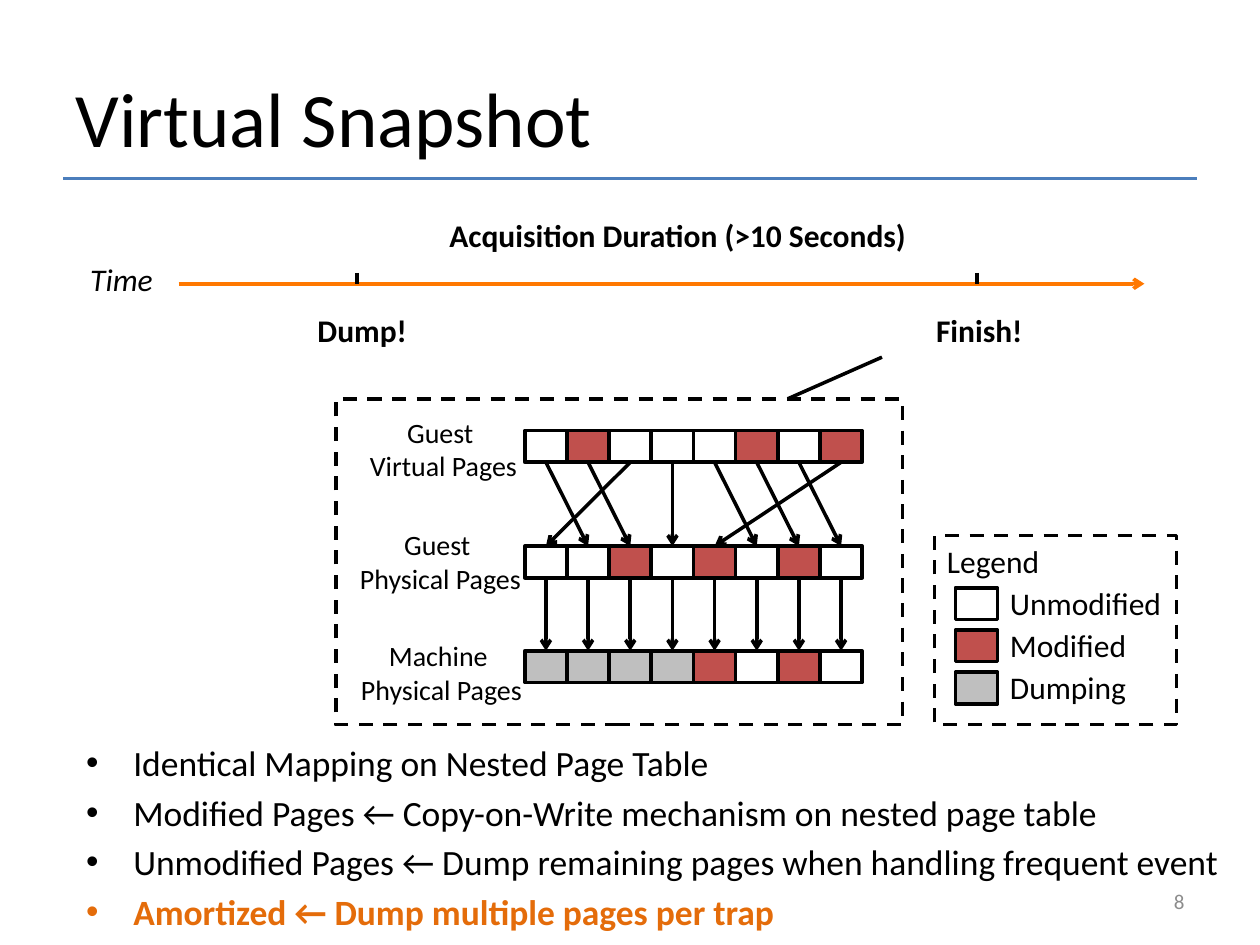
from pptx import Presentation
from pptx.dml.color import RGBColor
from pptx.enum.dml import MSO_LINE
from pptx.enum.shapes import MSO_CONNECTOR, MSO_SHAPE
from pptx.enum.text import MSO_ANCHOR, MSO_AUTO_SIZE, PP_ALIGN
from pptx.oxml.ns import qn
from pptx.util import Cm, Pt
from lxml.etree import SubElement

THEME = {
    "font": "Calibri", "ink": "000000", "rule": "4B7EBC", "time": "FF7800",
    "accent": "E46C0A", "number": "8C8C8C", "line": 2,
    "title": 44, "body": 20.3, "label": 18, "caption": 16, "small": 12,
}
FILLS = {"U": None, "M": "C0504D", "D": "BFBFBF"}

TITLE = "Virtual Snapshot"
POINTS = [
    "Identical Mapping on Nested Page Table",
    "Modified Pages ← Copy-on-Write mechanism on nested page table",
    "Unmodified Pages ← Dump remaining pages when handling frequent event",
    "Amortized ← Dump multiple pages per trap",
]
LABELS = [
    ("Acquisition Duration (>10 Seconds)", 8.81, 4.24, 9.8, {"bold": True}),
    ("Time", 1.57, 5.11, 1.8, {"italic": True}),
    ("Dump!", 6.15, 6.15, 2.34, {"bold": True}),
    ("Finish!", 18.62, 6.15, 2.26, {"bold": True}),
]
TICKS = [7.2, 19.69]
PAGES = [
    ("Guest \nVirtual Pages", 7.19, 8.25, 3.5, 8.68, "UMUUUMUM"),
    ("Guest \nPhysical Pages", 6.99, 10.52, 3.78, 11.01, "UUMUMUMU"),
    ("Machine \nPhysical Pages", 7.01, 12.75, 3.78, 13.12, "DDDDMUMU"),
]
MAPS = [[1, 2, 0, 3, 5, 6, 7, 4], list(range(8))]
LEGEND = [("Unmodified", "U", 3.6), ("Modified", "M", 2.9), ("Dumping", "D", 2.9)]
LEFT, WIDE, HIGH = 10.58, 0.85, 0.64


def style(frame, size, color=THEME["ink"], align=PP_ALIGN.LEFT, bold=None, italic=None):
    for para in frame.paragraphs:
        para.alignment = align
        for run in para.runs:
            font = run.font
            font.name, font.size = THEME["font"], Pt(size)
            font.bold, font.italic = bold, italic
            font.color.rgb = RGBColor.from_string(color)


def place(shape, x, y, w, h):
    shape.left, shape.top, shape.width, shape.height = Cm(x), Cm(y), Cm(w), Cm(h)


def label(slide, text, x, y, w, h=1.02, size=THEME["label"], **looks):
    frame = slide.shapes.add_textbox(Cm(x), Cm(y), Cm(w), Cm(h)).text_frame
    frame.text = text
    frame.word_wrap = False
    style(frame, size, **looks)
    return frame


def box(slide, x, y, w, h, fill=None, dash=False):
    shape = slide.shapes.add_shape(MSO_SHAPE.RECTANGLE, Cm(x), Cm(y), Cm(w), Cm(h))
    shape.shadow.inherit = False
    if fill:
        shape.fill.solid()
        shape.fill.fore_color.rgb = RGBColor.from_string(fill)
    else:
        shape.fill.background()
    shape.line.color.rgb = RGBColor.from_string(THEME["ink"])
    shape.line.width = Pt(THEME["line"])
    if dash:
        shape.line.dash_style = MSO_LINE.DASH
    return shape


def line(slide, x1, y1, x2, y2, color=THEME["ink"], arrow=False):
    link = slide.shapes.add_connector(MSO_CONNECTOR.STRAIGHT, Cm(x1), Cm(y1), Cm(x2), Cm(y2))
    link.line.color.rgb = RGBColor.from_string(color)
    link.line.width = Pt(THEME["line"])
    if arrow:
        SubElement(link.line._get_or_add_ln(), qn("a:tailEnd"), type="arrow")
    SubElement(link._element.spPr, qn("a:effectLst"))
    return link


def join(slide, top, low):
    link = line(slide, 0, 0, 1, 1, arrow=True)
    link.begin_connect(top, 2)
    link.end_connect(low, 0)


def words(slide):
    title, body = slide.shapes.title, slide.placeholders[1]
    place(title, 1.27, 0.76, 22.86, 3.18)
    title.text_frame.text = TITLE
    title.text_frame.vertical_anchor = MSO_ANCHOR.MIDDLE
    style(title.text_frame, THEME["title"])
    place(body, 1.48, 14.81, 23.92, 3.6)
    frame = body.text_frame
    frame.text = "\n".join(POINTS)
    frame.auto_size = MSO_AUTO_SIZE.NONE
    style(frame, THEME["body"])
    font = frame.paragraphs[-1].runs[0].font
    font.bold = True
    font.color.rgb = RGBColor.from_string(THEME["accent"])
    number = label(slide, "8", 18.21, 17.65, 5.92, size=THEME["small"],
                   color=THEME["number"], align=PP_ALIGN.RIGHT)
    number.word_wrap = True
    number.vertical_anchor = MSO_ANCHOR.MIDDLE


def timeline(slide):
    line(slide, 1.27, 3.6, 24.13, 3.6, THEME["rule"])
    line(slide, 3.6, 5.72, 23.07, 5.72, THEME["time"], arrow=True)
    for x in TICKS:
        line(slide, x, 5.5, x, 5.72)
    for text, x, y, w, looks in LABELS:
        label(slide, text, x, y, w, **looks)


def pages(slide):
    line(slide, 17.78, 7.2, 15.88, 8.04)
    box(slide, 6.77, 8.04, 11.43, 6.57, dash=True)
    rows = []
    for text, x, y, w, top, kinds in PAGES:
        label(slide, text, x, y, w, 1.62, THEME["caption"], align=PP_ALIGN.CENTER)
        rows.append([box(slide, LEFT + i * WIDE, top, WIDE, HIGH, FILLS[kind])
                     for i, kind in enumerate(kinds)])
    for upper, lower, goals in zip(rows, rows[1:], MAPS):
        for cell, goal in zip(upper, goals):
            join(slide, cell, lower[goal])


def legend(slide):
    frame = box(slide, 18.84, 10.8, 4.88, 3.81, dash=True).text_frame
    frame.text = "Legend"
    frame.vertical_anchor = MSO_ANCHOR.TOP
    style(frame, THEME["label"])
    for i, (text, kind, w) in enumerate(LEGEND):
        y = 11.85 + i * WIDE
        box(slide, 19.26, y, WIDE, HIGH, FILLS[kind])
        label(slide, text, 20.11, y - 0.2, w)


def main():
    deck = Presentation()
    deck.slide_width, deck.slide_height = Cm(25.4), Cm(19.05)
    slide = deck.slides.add_slide(deck.slide_layouts[1])
    for draw in (words, timeline, pages, legend):
        draw(slide)
    deck.save("out.pptx")


if __name__ == "__main__":
    main()
